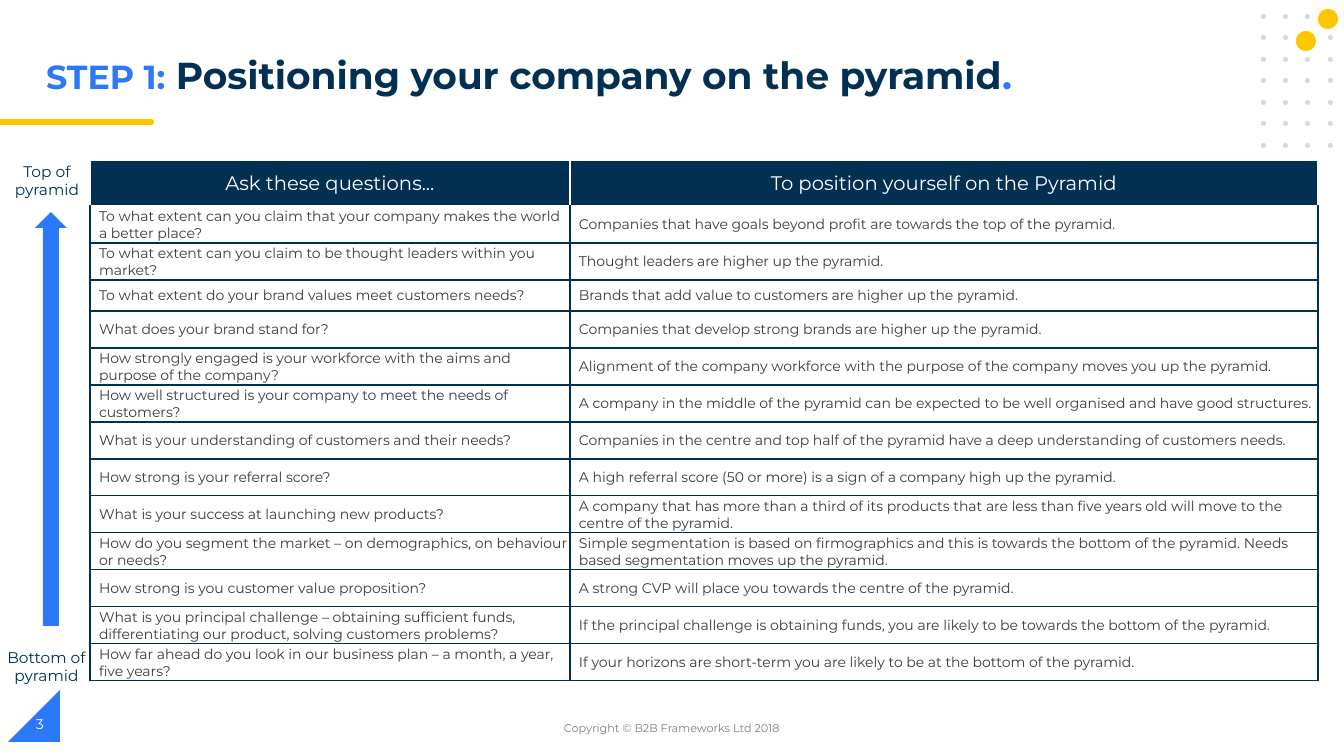
"""Build the slide on positioning a company on the pyramid."""
from lxml import etree
from pptx import Presentation
from pptx import util as u
from pptx.dml.color import RGBColor
from pptx.enum import shapes, text
from pptx.oxml import ns

PX = 914400 / 100.8
FONT = "Montserrat"
HEX = {"navy": "023053", "blue": "2B79F8", "gold": "FFC600", "dot": "D1DBE0",
       "white": "FFFFFF", "ink": "3B3B3B", "gray": "7F7F7F"}
KIND = shapes.MSO_SHAPE
MID = text.MSO_ANCHOR.MIDDLE
TOP = text.MSO_ANCHOR.TOP
LEFT = text.PP_ALIGN.LEFT
CENTER = text.PP_ALIGN.CENTER

TITLE = [("STEP 1:", 23.8, "blue"),
         (" Positioning your company on the pyramid", 26.8, "navy"),
         (".", 26.8, "blue")]
HEAD = ("Ask these questions...", "To position yourself on the Pyramid")
ROWS = [
    ("To what extent can you claim that your company makes the world a better place?",
     "Companies that have goals beyond profit are towards the top of the pyramid."),
    ("To what extent can you claim to be thought leaders within you market?",
     "Thought leaders are higher up the pyramid."),
    ("To what extent do your brand values meet customers needs?",
     "Brands that add value to customers are higher up the pyramid."),
    ("What does your brand stand for?",
     "Companies that develop strong brands are higher up the pyramid."),
    ("How strongly engaged is your workforce with the aims and purpose of the company?",
     "Alignment of the company workforce with the purpose of the company moves you up the pyramid."),
    ("How well structured is your company to meet the needs of customers?",
     "A company in the middle of the pyramid can be expected to be well organised and have good structures."),
    ("What is your understanding of customers and their needs?",
     "Companies in the centre and top half of the pyramid have a deep understanding of customers needs."),
    ("How strong is your referral score?",
     "A high referral score (50 or more) is a sign of a company high up the pyramid."),
    ("What is your success at launching new products?",
     "A company that has more than a third of its products that are less than five years old will move to the centre of the pyramid."),
    ("How do you segment the market – on demographics, on behaviour or needs?",
     "Simple segmentation is based on firmographics and this is towards the bottom of the pyramid. Needs based segmentation moves up the pyramid."),
    ("How strong is you customer value proposition?",
     "A strong CVP will place you towards the centre of the pyramid."),
    ("What is you principal challenge – obtaining sufficient funds, differentiating our product, solving customers problems?",
     "If the principal challenge is obtaining funds, you are likely to be towards the bottom of the pyramid."),
    ("How far ahead do you look in our business plan – a month, a year, five years?",
     "If your horizons are short-term you are likely to be at the bottom of the pyramid."),
]
COLS = (480, 748)
TALL = [46, 37, 37, 31] + [37] * 10
LABELS = [
    ("Bottom of pyramid", (-9, 643, 111, 47), 11, "navy", CENTER, TOP),
    ("Top of pyramid", (-2, 157, 98, 47), 11, "navy", CENTER, TOP),
    ("Copyright © B2B Frameworks Ltd 2018", (445, 708, 454, 40), 8, "gray", CENTER, MID),
    ("3", (26, 704, 302, 40), 10, "white", LEFT, MID),
]
DECOR = [
    (KIND.FLOWCHART_TERMINATOR, (135, 119, 19, 6), "gold"),
    (KIND.RECTANGLE, (0, 119, 142, 6), "gold"),
    *[(KIND.OVAL, (1261 + 67 * i // 3, 14 + 43 * j // 2, 5, 5), "dot")
      for j in range(7) for i in range(4)],
    (KIND.OVAL, (1318, 9, 20, 20), "gold"),
    (KIND.OVAL, (1296, 31, 20, 20), "gold"),
    (KIND.UP_ARROW, (35, 212, 32, 414), "blue"),
]


def px(n):
    return u.Emu(round(n * PX))


def rgb(name):
    return RGBColor.from_string(HEX[name])


def style(font, size, color, bold=False):
    font.name, font.size, font.bold = FONT, u.Pt(size), bold
    font.color.rgb = rgb(color)


def add_form(slide, kind, box, color):
    form = slide.shapes.add_shape(kind, *map(px, box))
    form.shadow.inherit = False
    form.fill.solid()
    form.fill.fore_color.rgb = rgb(color)
    form.line.fill.background()
    return form


def add_label(slide, words, box, size, color, align, anchor):
    frame = slide.shapes.add_textbox(*map(px, box)).text_frame
    frame.word_wrap = True
    frame.vertical_anchor = anchor
    par = frame.paragraphs[0]
    par.text, par.alignment = words, align
    style(par.font, size, color)


def add_title(slide):
    title = slide.shapes.title
    title.left, title.top, title.width, title.height = map(px, (36, 52, 1080, 61))
    frame = title.text_frame
    frame.auto_size = text.MSO_AUTO_SIZE.NONE
    frame.vertical_anchor = TOP
    par = frame.paragraphs[0]
    par.alignment, par.line_spacing = LEFT, 0.9
    for words, size, color in TITLE:
        run = par.add_run()
        run.text = words
        style(run.font, size, color, True)


def add_edges(cell, colors):
    props = cell._tc.get_or_add_tcPr()
    for side, color in zip("LRTB", colors):
        line = etree.SubElement(props, ns.qn("a:ln" + side), w="12700")
        fill = etree.SubElement(line, ns.qn("a:solidFill"))
        etree.SubElement(fill, ns.qn("a:srgbClr"), val=HEX[color])


def fill_cell(cell, words, row):
    head = row == 0
    edge = "white" if head else "navy"
    add_edges(cell, (edge, edge, "white" if row < 2 else edge, edge))
    if head:
        cell.fill.solid()
        cell.fill.fore_color.rgb = rgb("navy")
    else:
        cell.fill.background()
    gap = px(0 if head else 1)
    cell.margin_left = cell.margin_right = cell.margin_top = gap
    cell.margin_bottom = 0
    cell.vertical_anchor = MID
    par = cell.text_frame.paragraphs[0]
    par.text = words
    par.alignment = CENTER if head else LEFT
    if not head:
        par._p.get_or_add_pPr().set("marL", str(px(8)))
    style(par.font, 14 if head else 10, "white" if head else "ink")


def add_grid(slide):
    rows = [HEAD] + ROWS
    box = (90, 160, sum(COLS), sum(TALL))
    grid = slide.shapes.add_table(len(rows), len(COLS), *map(px, box)).table
    grid.first_row = grid.horz_banding = False
    for col, wide in zip(grid.columns, COLS):
        col.width = px(wide)
    for r, (pair, tall) in enumerate(zip(rows, TALL)):
        grid.rows[r].height = px(tall)
        for c, words in enumerate(pair):
            fill_cell(grid.cell(r, c), words, r)


def main():
    deck = Presentation()
    deck.slide_width, deck.slide_height = px(1344), px(756)
    slide = deck.slides.add_slide(deck.slide_layouts[5])
    corner = add_form(slide, KIND.RIGHT_TRIANGLE, (8, 690, 52, 52), "blue")
    corner.rotation = 270
    for item in DECOR:
        add_form(slide, *item)
    add_title(slide)
    add_grid(slide)
    for item in LABELS:
        add_label(slide, *item)
    deck.save("out.pptx")


if __name__ == "__main__":
    main()
